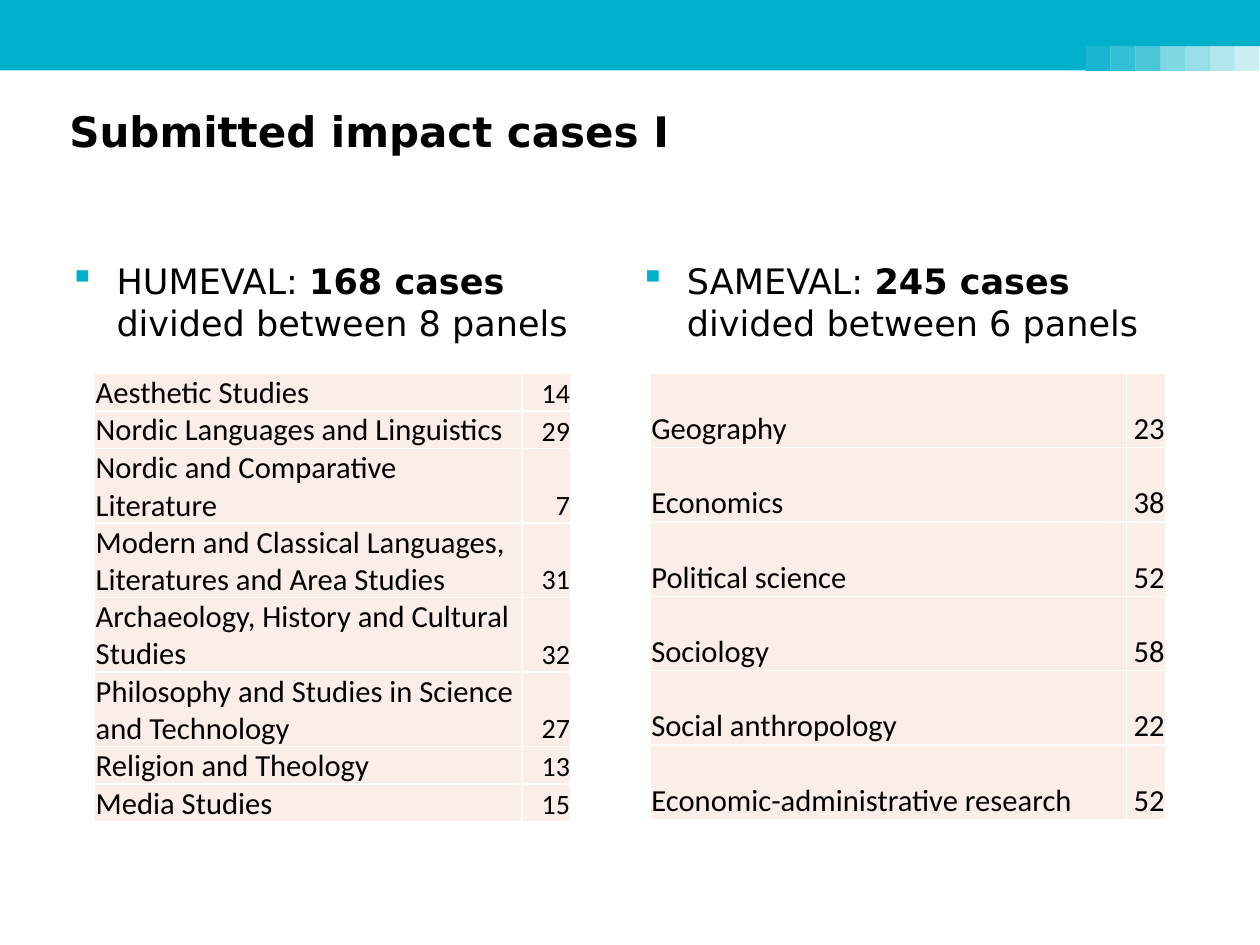
from dataclasses import dataclass

from lxml import etree
from pptx import Presentation
from pptx import util as u
from pptx.dml.color import RGBColor
from pptx.enum import shapes, text
from pptx.oxml import ns

COLOURS = {"teal": "00B0CA", "text": "000000", "cell": "FBEDE7", "rule": "FFFFFF"}
HEADING_FONT = "DejaVu Sans"
TABLE_FONT = "Calibri"


@dataclass
class Area:
    left: float
    top: float
    width: float
    height: float

    def lengths(self) -> list:
        return [u.Cm(v) for v in (self.left, self.top, self.width, self.height)]


@dataclass
class Evaluation:
    name: str
    cases: str
    panels: str
    text_area: Area
    table_area: Area
    count_width: float
    count_size: float
    rows: list[tuple[str, int]]


EVALUATIONS = [
    Evaluation(
        "HUMEVAL: ", "168 cases ", "divided between 8 panels",
        Area(1.4, 5.13, 11.1, 13.2), Area(1.91, 7.52, 9.6, 4.48), 0.99, 16,
        [
            ("Aesthetic Studies", 14),
            ("Nordic Languages and Linguistics", 29),
            ("Nordic and Comparative Literature", 7),
            ("Modern and Classical Languages, Literatures and Area Studies", 31),
            ("Archaeology, History and Cultural Studies", 32),
            ("Philosophy and Studies in Science and Technology", 27),
            ("Religion and Theology", 13),
            ("Media Studies", 15),
        ],
    ),
    Evaluation(
        "SAMEVAL: ", "245 cases ", "divided between 6 panels",
        Area(12.9, 5.13, 11.55, 13.2), Area(13.11, 7.52, 10.39, 9), 0.79, 17.5,
        [
            ("Geography", 23),
            ("Economics", 38),
            ("Political science", 52),
            ("Sociology", 58),
            ("Social anthropology", 22),
            ("Economic-administrative research", 52),
        ],
    ),
]


def colour(name: str) -> RGBColor:
    return RGBColor.from_string(COLOURS[name])


def apply(target, values: dict) -> None:
    for name, value in values.items():
        setattr(target, name, value)


def add_element(parent, tag: str, **attributes: str):
    return etree.SubElement(parent, ns.qn(tag), attributes)


def paint(shape, opacity: int = 100) -> None:
    shape.shadow.inherit = False
    shape.fill.solid()
    shape.fill.fore_color.rgb = colour("teal")
    shape.line.fill.background()
    if opacity < 100:
        fill_colour = shape.fill._xPr.find(".//" + ns.qn("a:srgbClr"))
        add_element(fill_colour, "a:alpha", val=str(opacity * 1000))


def add_span(para, words: str, font: str, size: float, bold: bool = False) -> None:
    span = para.add_run()
    span.text = words
    apply(span.font, {"name": font, "size": u.Pt(size), "bold": bold})
    span.font.color.rgb = colour("text")


def add_text_box(page, area: Area, left_inset: float):
    box = page.shapes.add_textbox(*area.lengths())
    apply(box.text_frame, {
        "word_wrap": True,
        "vertical_anchor": text.MSO_ANCHOR.TOP,
        "margin_left": u.Cm(left_inset),
        "margin_top": u.Cm(0.1),
        "margin_right": u.Cm(0.1),
        "margin_bottom": u.Cm(0.1),
    })
    return box.text_frame.paragraphs[0]


def add_banner(page) -> None:
    # Band with a notch at the lower right
    notch, step, top, bottom = 21.89, 0.5, 0.93, 1.42
    outline = [(notch, bottom), (notch, top), (25.4, top), (25.4, 0), (0, 0)]
    builder = page.shapes.build_freeform(u.Cm(0), u.Cm(bottom))
    builder.add_line_segments([(u.Cm(x), u.Cm(y)) for x, y in outline], close=True)
    paint(builder.convert_to_shape())

    # Fading squares in the notch
    for index, opacity in enumerate((90, 80, 70, 50, 40, 30, 20)):
        area = Area(notch + index * step, top, step, step)
        square = page.shapes.add_shape(shapes.MSO_SHAPE.RECTANGLE, *area.lengths())
        paint(square, opacity)


def add_summary(page, evaluation: Evaluation) -> None:
    para = add_text_box(page, evaluation.text_area, 0)
    properties = para._p.get_or_add_pPr()
    indent = u.Cm(0.95)
    properties.set("marL", str(indent))
    properties.set("indent", str(-indent))
    bullet_colour = add_element(properties, "a:buClr")
    add_element(bullet_colour, "a:srgbClr", val=COLOURS["teal"])
    add_element(properties, "a:buChar", char="▪")
    add_span(para, evaluation.name, HEADING_FONT, 20)
    add_span(para, evaluation.cases, HEADING_FONT, 20, bold=True)
    add_span(para, evaluation.panels, HEADING_FONT, 20)


def format_cell(cell) -> None:
    inset = u.Cm(0.02)
    apply(cell, {
        "margin_left": inset,
        "margin_top": inset,
        "margin_right": inset,
        "margin_bottom": 0,
        "vertical_anchor": text.MSO_ANCHOR.BOTTOM,
    })
    properties = cell._tc.get_or_add_tcPr()
    for side in ("a:lnL", "a:lnR", "a:lnT", "a:lnB"):
        border = add_element(properties, side, w=str(u.Pt(1)))
        fill = add_element(border, "a:solidFill")
        add_element(fill, "a:srgbClr", val=COLOURS["rule"])
    cell.fill.solid()
    cell.fill.fore_color.rgb = colour("cell")


def add_panel_table(page, evaluation: Evaluation) -> None:
    area = evaluation.table_area
    frame = page.shapes.add_table(len(evaluation.rows), 2, *area.lengths())
    table = frame.table
    apply(table, {"first_row": False, "horz_banding": False})
    table.columns[0].width = u.Cm(area.width - evaluation.count_width)
    table.columns[1].width = u.Cm(evaluation.count_width)
    styles = [(17.5, text.PP_ALIGN.LEFT), (evaluation.count_size, text.PP_ALIGN.RIGHT)]
    for row, values in enumerate(evaluation.rows):
        for column, (value, (size, alignment)) in enumerate(zip(values, styles)):
            cell = table.cell(row, column)
            format_cell(cell)
            para = cell.text_frame.paragraphs[0]
            para.alignment = alignment
            add_span(para, str(value), TABLE_FONT, size)


def main() -> None:
    deck = Presentation()
    apply(deck, {"slide_width": u.Cm(25.4), "slide_height": u.Cm(19.05)})
    page = deck.slides.add_slide(deck.slide_layouts[6])

    add_banner(page)

    # Title
    title = add_text_box(page, Area(1.3, 2.03, 23.19, 3), 0.1)
    add_span(title, "Submitted impact cases I", HEADING_FONT, 24, bold=True)

    # Summary and table for each evaluation
    for evaluation in EVALUATIONS:
        add_summary(page, evaluation)
        add_panel_table(page, evaluation)

    deck.save("out.pptx")


if __name__ == "__main__":
    main()
